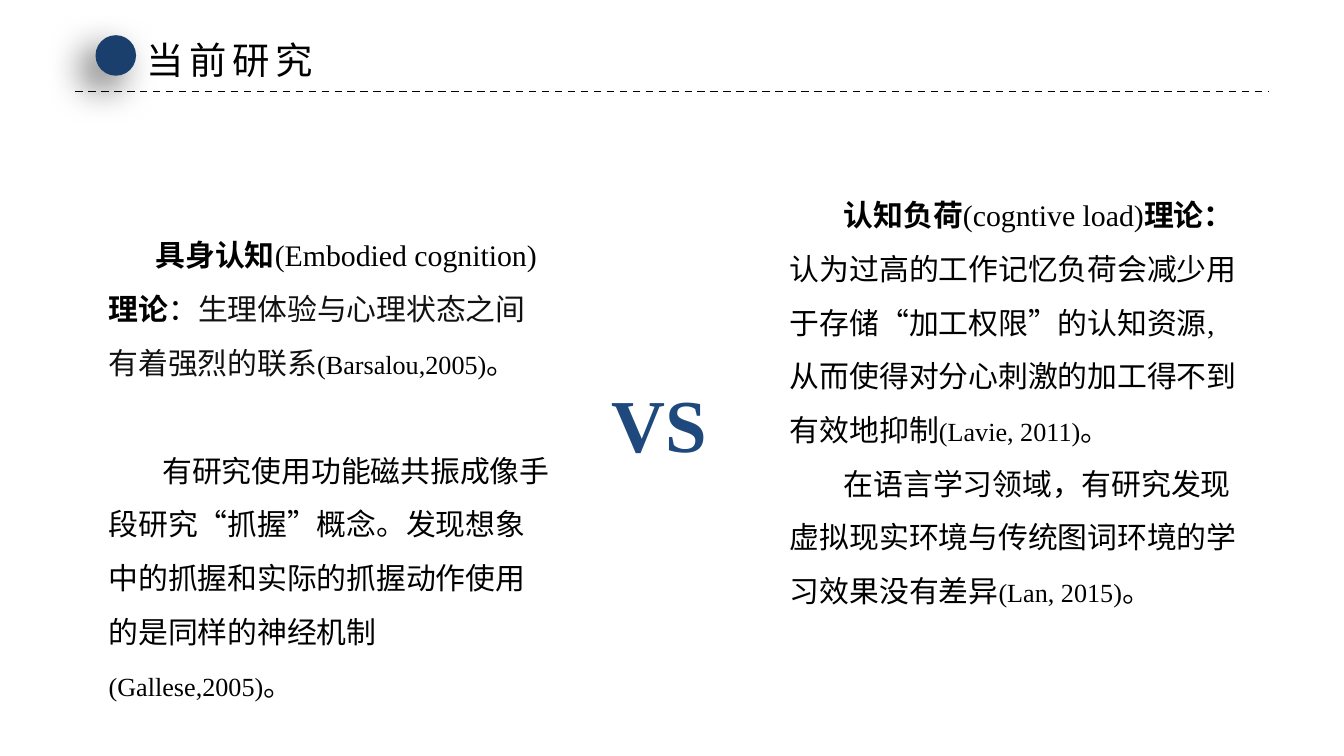
import pptx
import pptx.util
import pptx.dml.color
import pptx.enum.dml
import pptx.enum.shapes
import pptx.enum.text
import pptx.oxml
import pptx.oxml.ns
from collections import namedtuple

COLORS = {"black": "000000", "ink": "111111", "navy": "1A3F6C", "blue": "1F497D"}
SERIF = "Times New Roman"
SANS = "Noto Sans CJK SC"
WIDTH = pptx.util.Inches(10)
HEIGHT = pptx.util.Inches(5.625)
Box = namedtuple("Box", "left top width height")
Run = namedtuple("Run", "text size bold font color", defaults=(16, False, SERIF, "black"))
Passage = namedtuple("Passage", "indent before runs")

EMBODIED = [
    Passage(0.35, 0, [
        Run("具身认知", bold=True),
        Run("(Embodied cognition)"),
        Run("理论", bold=True),
        Run("："),
        Run("生理体验与心理状态之间有着强烈的联系", font="Arial", color="ink"),
        Run("(Barsalou,2005)", 14),
        Run("。"),
    ]),
    Passage(0.4, 29, [
        Run("有研究"),
        Run("使用功能磁共振成像手段研究“抓握”概念。发现想象中的抓握和实际的抓握动作使用的是同样的神经机制", font="Calibri"),
        Run("(Gallese,2005)", 14),
        Run("。"),
    ]),
]
LOAD = [
    Passage(0.4, 0, [
        Run("认知负荷", bold=True),
        Run("(cogntive load)"),
        Run("理论：", bold=True),
        Run("认为过高的工作记忆负荷会减少用于存储“加工权限”的认知资源, 从而使得对分心刺激的加工得不到有效地抑制"),
        Run("(Lavie, 2011)", 14),
        Run("。"),
    ]),
    Passage(0.4, 0, [
        Run("在语言学习领域，有研究发现虚拟现实环境与传统图词环境的学习效果没有差异"),
        Run("(Lan, 2015)", 14),
        Run("。"),
    ]),
]


def share(left, top, width, height):
    """Return a box from percentages of the slide's size."""
    return Box(*(int(size * part / 100) for size, part in
                 zip((WIDTH, HEIGHT, WIDTH, HEIGHT), (left, top, width, height))))


def rgb(name):
    """Look up a colour by name."""
    return pptx.dml.color.RGBColor.from_string(COLORS[name])


def add_effects(shape, content=""):
    """Give a shape an effect list, empty unless content is passed."""
    effects = pptx.oxml.parse_xml(
        f'<a:effectLst {pptx.oxml.ns.nsdecls("a")}>{content}</a:effectLst>')
    shape._element.spPr.append(effects)


def add_run(paragraph, item):
    """Append one formatted run to a paragraph."""
    run = paragraph.add_run()
    run.text = item.text
    run.font.size = pptx.util.Pt(item.size)
    run.font.bold = item.bold
    run.font.name = item.font
    run.font.color.rgb = rgb(item.color)
    return run


def add_text_frame(slide, box, wrap=True):
    """Add a text box and return its frame."""
    frame = slide.shapes.add_textbox(*box).text_frame
    frame.word_wrap = wrap
    frame.auto_size = pptx.enum.text.MSO_AUTO_SIZE.NONE
    return frame


def add_header(slide, box):
    """Place the dashed rule, the dot and the title."""
    bottom = box.top + box.height
    rule = slide.shapes.add_connector(
        pptx.enum.shapes.MSO_CONNECTOR.STRAIGHT,
        box.left, bottom, box.left + box.width, bottom)
    rule.line.color.rgb = rgb("black")
    rule.line.width = pptx.util.Pt(1)
    rule.line.dash_style = pptx.enum.dml.MSO_LINE.DASH
    add_effects(rule)

    diameter = int(box.height * 0.67)
    dot = slide.shapes.add_shape(
        pptx.enum.shapes.MSO_SHAPE.OVAL,
        box.left + int(box.width * 0.017), box.top + int(box.height * 0.07),
        diameter, diameter)
    dot.fill.solid()
    dot.fill.fore_color.rgb = rgb("navy")
    dot.line.fill.background()
    add_effects(dot, f'<a:outerShdw blurRad="{pptx.util.Pt(20)}" dist="{pptx.util.Pt(10)}" '
                     f'dir="8100000" algn="tr" rotWithShape="0">'
                     f'<a:srgbClr val="{COLORS["black"]}"><a:alpha val="60000"/></a:srgbClr>'
                     f'</a:outerShdw>')

    title_box = Box(box.left + int(box.width * 0.0485), box.top,
                    int(box.width * 0.168), int(box.height * 0.98))
    frame = add_text_frame(slide, title_box, wrap=False)
    run = add_run(frame.paragraphs[0], Run("当前研究", 20, font=SANS))
    properties = run._r.get_or_add_rPr()
    properties.set("spc", "300")
    properties.append(pptx.oxml.parse_xml(
        f'<a:ea {pptx.oxml.ns.nsdecls("a")} typeface="{SANS}"/>'))


def add_theory(slide, box, passages):
    """Place one theory's paragraphs in a column."""
    frame = add_text_frame(slide, box)
    for index, passage in enumerate(passages):
        paragraph = frame.add_paragraph() if index else frame.paragraphs[0]
        paragraph.line_spacing = 1.5
        if passage.before:
            paragraph.space_before = pptx.util.Pt(passage.before)
        paragraph._p.get_or_add_pPr().set("indent", str(pptx.util.Inches(passage.indent)))
        for item in passage.runs:
            add_run(paragraph, item)


def add_versus(slide, box):
    """Place the sign between the two theories."""
    frame = add_text_frame(slide, box)
    add_run(frame.paragraphs[0], Run("VS", 40, True, color="blue"))


def main():
    """Build and save the slide."""
    presentation = pptx.Presentation()
    presentation.slide_width = WIDTH
    presentation.slide_height = HEIGHT
    slide = presentation.slides.add_slide(presentation.slide_layouts[6])
    add_header(slide, share(5.6, 4.1, 88.8, 8))
    add_theory(slide, share(7.1, 28.1, 35.1, 51.9), EMBODIED)
    add_theory(slide, share(57.8, 22.8, 35.7, 65.6), LOAD)
    add_versus(slide, share(44.5, 49.1, 10.1, 13.7))
    presentation.save("out.pptx")


if __name__ == "__main__":
    main()
